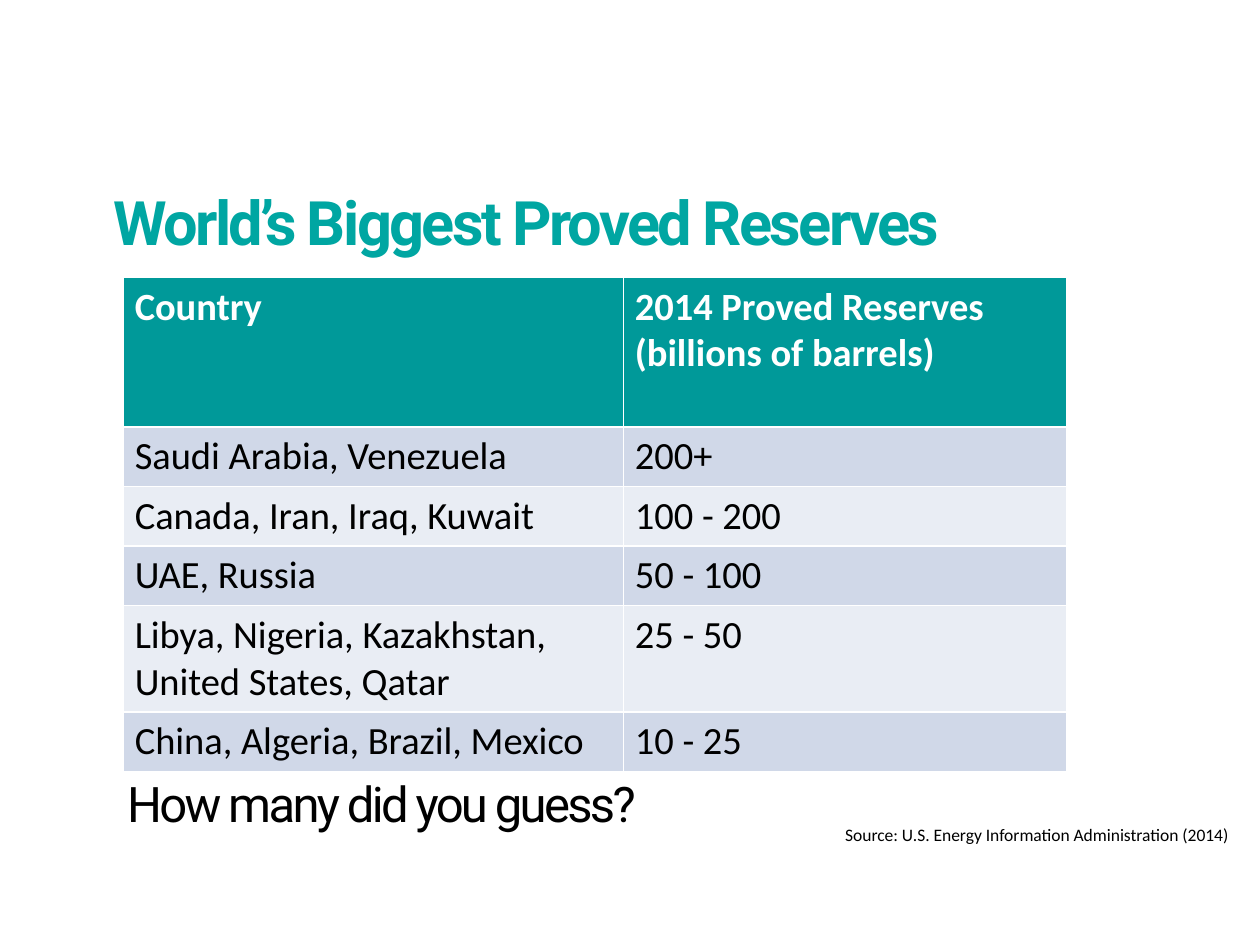
"""Build a slide with a table of the world's biggest proved oil reserves."""

from dataclasses import dataclass

import pptx
import pptx.dml.color
import pptx.enum.text
import pptx.shapes.base
import pptx.slide
import pptx.text.text
import pptx.util
from pptx.util import Inches


@dataclass(frozen=True)
class TextStyle:
    """Font settings shared by all runs of a paragraph."""

    font: str
    size: int
    color: str
    bold: bool = False
    tracking: float = 0
    line_spacing: int = 0


@dataclass(frozen=True)
class Theme:
    """Colours and type styles of the slide."""

    header_fill: str = "009999"
    band_fills: tuple[str, str] = ("D0D8E8", "E9EDF4")
    title: TextStyle = TextStyle("Roboto", 35, "00A6A2", True, -1.5, 32)
    question: TextStyle = TextStyle("Roboto", 28, "000000", False, -1.5, 32)
    header: TextStyle = TextStyle("Calibri", 22, "FFFFFF", True)
    cell: TextStyle = TextStyle("Calibri", 22, "000000")
    source: TextStyle = TextStyle("Calibri", 10, "000000")


@dataclass(frozen=True)
class Box:
    """Position and size in inches."""

    left: float
    top: float
    width: float
    height: float

    def lengths(self) -> tuple[pptx.util.Length, ...]:
        """Return the four measures as lengths."""
        return tuple(map(Inches, (self.left, self.top, self.width, self.height)))


@dataclass(frozen=True)
class ReserveRow:
    """One table row: countries, their reserves and the row height."""

    countries: str
    reserves: str
    height: float = 0.46


THEME = Theme()
COLUMN_WIDTHS = (3.97, 3.52)
ROWS = (
    ReserveRow("Country", "2014 Proved Reserves\n(billions of barrels)", 1.19),
    ReserveRow("Saudi Arabia, Venezuela", "200+"),
    ReserveRow("Canada, Iran, Iraq, Kuwait", "100 - 200"),
    ReserveRow("UAE, Russia", "50 - 100"),
    ReserveRow("Libya, Nigeria, Kazakhstan, United States, Qatar", "25 - 50", 0.82),
    ReserveRow("China, Algeria, Brazil, Mexico", "10 - 25"),
)


def write_text(frame: pptx.text.text.TextFrame, text: str, style: TextStyle) -> None:
    """Fill a text frame with left-aligned paragraphs in one style."""
    frame.text = text
    for paragraph in frame.paragraphs:
        paragraph.alignment = pptx.enum.text.PP_ALIGN.LEFT
        if style.line_spacing:
            paragraph.line_spacing = pptx.util.Pt(style.line_spacing)
        font = paragraph.font
        font.name = style.font
        font.size = pptx.util.Pt(style.size)
        font.bold = style.bold
        font.color.rgb = pptx.dml.color.RGBColor.from_string(style.color)
        if style.tracking:
            for run in paragraph.runs:
                run._r.get_or_add_rPr().set("spc", str(int(style.tracking * 100)))


def place_text(shape: pptx.shapes.base.BaseShape, box: Box, text: str, style: TextStyle) -> None:
    """Position a text shape and write into it from the top."""
    shape.left, shape.top, shape.width, shape.height = box.lengths()
    frame = shape.text_frame
    frame.word_wrap = True
    frame.auto_size = pptx.enum.text.MSO_AUTO_SIZE.NONE
    frame.vertical_anchor = pptx.enum.text.MSO_ANCHOR.TOP
    write_text(frame, text, style)


def add_label(slide: pptx.slide.Slide, box: Box, text: str, style: TextStyle) -> None:
    """Add a text box."""
    place_text(slide.shapes.add_textbox(*box.lengths()), box, text, style)


def add_reserves_table(slide: pptx.slide.Slide, left: float, top: float) -> None:
    """Add the table with a coloured header and banded rows."""
    box = Box(left, top, sum(COLUMN_WIDTHS), sum(row.height for row in ROWS))
    table = slide.shapes.add_table(len(ROWS), len(COLUMN_WIDTHS), *box.lengths()).table
    for column, width in zip(table.columns, COLUMN_WIDTHS):
        column.width = Inches(width)
    for index, row in enumerate(ROWS):
        table.rows[index].height = Inches(row.height)
        style = THEME.cell if index else THEME.header
        fill = THEME.band_fills[(index - 1) % 2] if index else THEME.header_fill
        for cell, text in zip(table.rows[index].cells, (row.countries, row.reserves)):
            cell.margin_left = cell.margin_right = Inches(0.09)
            cell.fill.solid()
            cell.fill.fore_color.rgb = pptx.dml.color.RGBColor.from_string(fill)
            write_text(cell.text_frame, text, style)


def main() -> None:
    """Build and save the presentation."""
    presentation = pptx.Presentation()
    presentation.slide_width = Inches(10)
    presentation.slide_height = Inches(7.5)
    slide = presentation.slides.add_slide(presentation.slide_layouts.get_by_name("Title Only"))
    place_text(
        slide.shapes.title, Box(0.8, 1.55, 7.98, 1.26), "World’s Biggest Proved Reserves", THEME.title
    )
    add_label(slide, Box(0.91, 6.11, 7.75, 0.76), "How many did you guess?", THEME.question)
    add_reserves_table(slide, 0.98, 2.2)
    add_label(
        slide,
        Box(6.61, 6.49, 5, 0.27),
        "Source: U.S. Energy Information Administration (2014)",
        THEME.source,
    )
    presentation.save("out.pptx")


if __name__ == "__main__":
    main()
